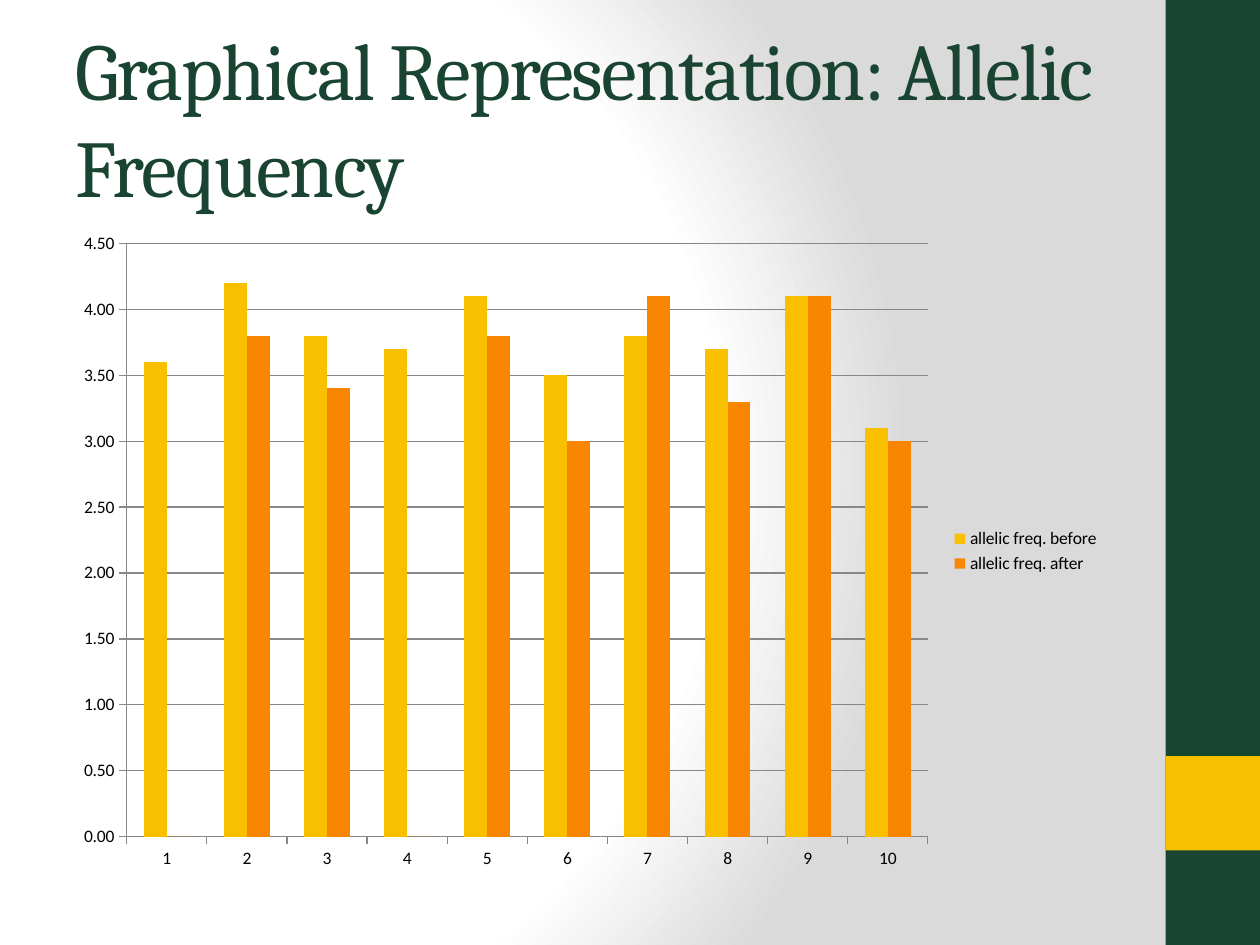
import pptx
import pptx.chart.data
import pptx.dml.color
import pptx.enum.chart
import pptx.enum.shapes
import pptx.enum.text
import pptx.oxml
import pptx.oxml.ns
import pptx.util

Inches = pptx.util.Inches
Pt = pptx.util.Pt
GREEN, YELLOW, ORANGE, GRAY = "194431", "F8C000", "F88600", "878787"


def color(value):
    return pptx.dml.color.RGBColor.from_string(value)


def set_values(target, values):
    for name, value in values.items():
        setattr(target, name, value)


presentation = pptx.Presentation()
set_values(presentation, {"slide_width": Inches(10), "slide_height": Inches(7.5)})
slide = presentation.slides.add_slide(presentation.slide_layouts[6])

background_fill = slide.background.fill
background_fill.solid()
background_properties = slide.background._cSld.bg.bgPr
stops = "".join(
    f'<a:gs pos="{position * 1000}"><a:srgbClr val="{value}"/></a:gs>'
    for position, value in [(0, "FFFFFF"), (75, "FFFFFF"), (100, "DADADA")]
)
gradient = pptx.oxml.parse_xml(
    f'<a:gradFill {pptx.oxml.ns.nsdecls("a")} rotWithShape="1"><a:gsLst>{stops}</a:gsLst>'
    '<a:path path="circle"><a:fillToRect l="20000" t="50000" r="100000" b="50000"/></a:path>'
    "</a:gradFill>"
)
background_properties.replace(background_properties[0], gradient)

for top, height, fill in [(0, 7.5, GREEN), (6, 0.75, YELLOW)]:
    shape = slide.shapes.add_shape(
        pptx.enum.shapes.MSO_SHAPE.RECTANGLE,
        Inches(9.25), Inches(top), Inches(0.75), Inches(height),
    )
    shape.shadow.inherit = False
    shape.fill.solid()
    shape.fill.fore_color.rgb = color(fill)
    shape.line.fill.background()

title = slide.shapes.add_textbox(Inches(0.5), Inches(0.3), Inches(8.33), Inches(1.25))
set_values(title.text_frame, {
    "word_wrap": True,
    "vertical_anchor": pptx.enum.text.MSO_ANCHOR.MIDDLE,
})
run = title.text_frame.paragraphs[0].add_run()
run.text = "Graphical Representation: Allelic Frequency"
set_values(run.font, {"name": "Cambria", "size": Pt(46)})
run.font.color.rgb = color(GREEN)
run.font._element.set("spc", "-100")

chart_data = pptx.chart.data.CategoryChartData(number_format="0.00")
chart_data.categories = [str(number) for number in range(1, 11)]
chart_data.add_series("allelic freq. before", [3.6, 4.2, 3.8, 3.7, 4.1, 3.5, 3.8, 3.7, 4.1, 3.1])
chart_data.add_series("allelic freq. after", [0, 3.8, 3.4, 0, 3.8, 3, 4.1, 3.3, 4.1, 3])
chart = slide.shapes.add_chart(
    pptx.enum.chart.XL_CHART_TYPE.COLUMN_CLUSTERED,
    Inches(0.5), Inches(1.75), Inches(8.33), Inches(5.25), chart_data,
).chart
set_values(chart, {"has_title": False, "has_legend": True})
set_values(chart.font, {"name": "Calibri", "size": Pt(10)})
chart.font.color.rgb = color("000000")
set_values(chart.legend, {
    "position": pptx.enum.chart.XL_LEGEND_POSITION.RIGHT,
    "include_in_layout": False,
})

plot = chart.plots[0]
set_values(plot, {"gap_width": 150, "overlap": 0, "vary_by_categories": False})
for series, fill in zip(plot.series, [YELLOW, ORANGE]):
    series.format.fill.solid()
    series.format.fill.fore_color.rgb = color(fill)

set_values(chart.value_axis, {
    "minimum_scale": 0,
    "maximum_scale": 4.5,
    "major_unit": 0.5,
    "has_major_gridlines": True,
})
set_values(chart.value_axis.tick_labels, {
    "number_format": "0.00",
    "number_format_is_linked": False,
})
for axis in (chart.category_axis, chart.value_axis):
    axis.major_tick_mark = pptx.enum.chart.XL_TICK_MARK.OUTSIDE
for part in (chart.category_axis, chart.value_axis, chart.value_axis.major_gridlines):
    part.format.line.color.rgb = color(GRAY)
    part.format.line.width = Pt(0.75)

presentation.save("out.pptx")
